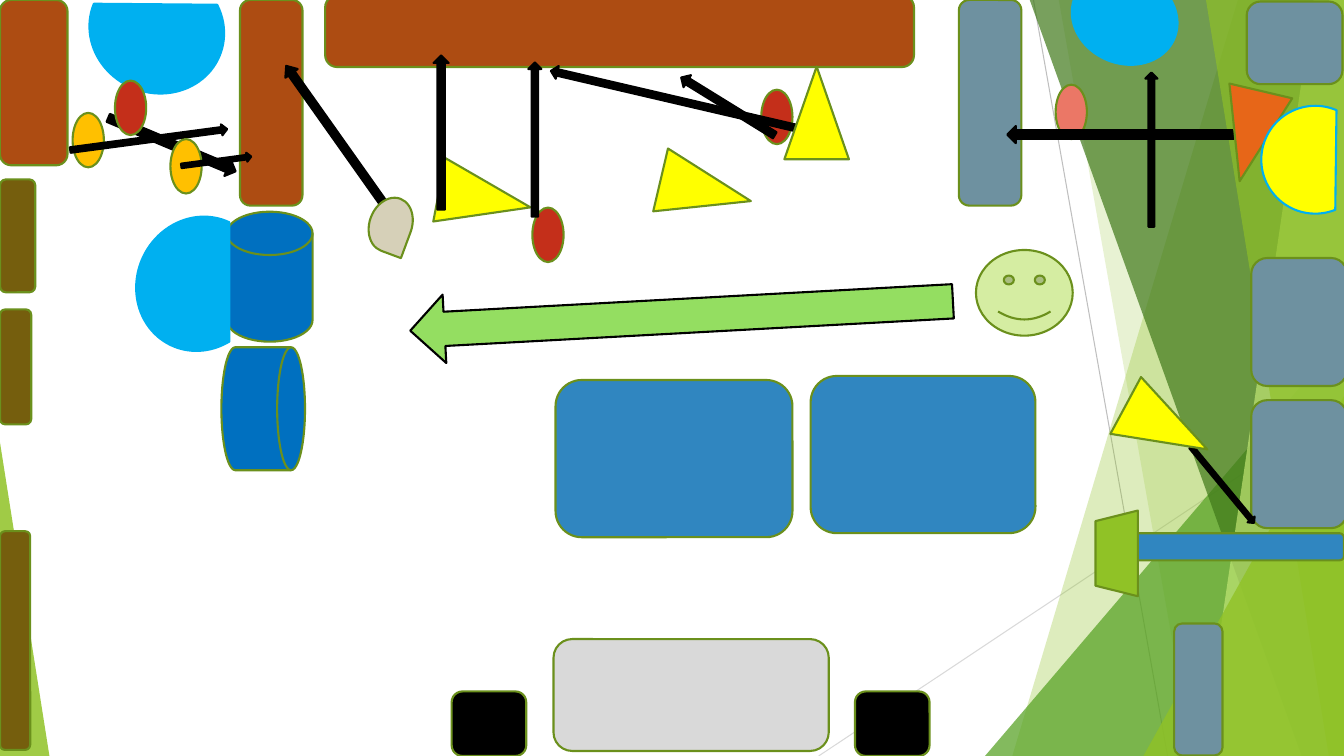
from dataclasses import dataclass

from lxml import etree
from pptx import Presentation
from pptx.dml.color import RGBColor
from pptx.enum.shapes import MSO_CONNECTOR, MSO_SHAPE
from pptx.oxml.ns import qn
from pptx.util import Inches, Pt

ROUND = MSO_SHAPE.ROUNDED_RECTANGLE
TRIANGLE = MSO_SHAPE.ISOSCELES_TRIANGLE
OVAL = MSO_SHAPE.OVAL
CHORD = MSO_SHAPE.CHORD
ARROW = MSO_SHAPE.UP_ARROW
DISK = MSO_SHAPE.FLOWCHART_MAGNETIC_DISK
SMILEY = MSO_SHAPE.SMILEY_FACE
TEAR = MSO_SHAPE.TEAR
TRAPEZOID = MSO_SHAPE.TRAPEZOID
STRAIGHT = MSO_CONNECTOR.STRAIGHT

WIDTH, HEIGHT, TOP = 13.33, 7.5, -0.01
GREEN, OLIVE, BLACK = "90C226", "6B901C", "000000"
OCHRE, RUST, SLATE = "755E0D", "AD4C12", "6E91A0"
SKY, BLUE, DEEP_BLUE = "00B0F0", "3086C0", "0070C0"
YELLOW, AMBER, RED = "FFFF00", "FFC000", "C42F1A"


@dataclass
class Ray:
    x1: float
    y1: float
    x2: float
    y2: float
    color: str


@dataclass
class Facet:
    """Translucent band from the top edge to the bottom, ending at the right side."""
    top_x: float
    bottom_x: float
    fill: str
    alpha: int


@dataclass
class Piece:
    kind: MSO_SHAPE
    x: float
    y: float
    w: float
    h: float
    fill: str
    rot: float = 0
    line: str | None = OLIVE
    adj: tuple[float, ...] = ()
    alpha: int = 100


def block(x: float, y: float, w: float, h: float, fill: str, rot: float = 0) -> Piece:
    return Piece(ROUND, x, y, w, h, fill, rot)


def person(x: float, y: float, fill: str) -> Piece:
    return Piece(OVAL, x, y, 0.31, 0.54, fill)


def cone(x: float, y: float, rot: float = 0, fill: str = YELLOW) -> Piece:
    return Piece(TRIANGLE, x, y, 0.64, 0.92, fill, rot)


def arrow(x: float, y: float, w: float, h: float, rot: float = 0,
          fill: str = BLACK, adj: tuple[float, ...] = ()) -> Piece:
    return Piece(ARROW, x, y, w, h, fill, rot, BLACK, adj)


def wedge(x: float, y: float, w: float, h: float, fill: str, alpha: int, tip: float) -> Piece:
    return Piece(TRIANGLE, x, y, w, h, fill, 0, None, (tip,), alpha)


BACKDROP = [
    Ray(10.25, 0, 11.58, HEIGHT, "BFBFBF"),
    Ray(WIDTH, 4.03, 8.12, HEIGHT, "D9D9D9"),
    Facet(12.28, 10.04, GREEN, 30),
    Facet(10.5, 11.83, GREEN, 20),
    wedge(9.77, 3.33, 3.56, 4.17, "54A021", 72, 1),
    Facet(10.21, 12.91, "3F7819", 70),
    Facet(13.03, 11.92, "C0E474", 70),
    Facet(11.96, 13.18, GREEN, 65),
    wedge(11.34, 3.93, 1.99, 3.57, GREEN, 80, 1),
    wedge(0, 4.39, 0.49, 3.11, GREEN, 85, 0),
]

ROOM = [
    block(0, 5.27, 0.3, 2.17, OCHRE),
    block(5.49, 6.34, 2.73, 1.11, "D9D9D9"),
    *(block(x, 6.86, 0.74, 0.64, BLACK) for x in (4.48, 8.48)),
    block(0, 0, 0.67, 1.64, RUST),
    block(1.67, 0.71, 2.04, 0.62, RUST, 90),
    block(5.79, -2.61, 0.71, 5.84, RUST, 90),
    block(8.8, 0.71, 2.04, 0.62, SLATE, 90),
    Piece(CHORD, 0.93, -0.38, 1.25, 1.35, SKY, 292.5, SKY),
    Piece(CHORD, 10.7, -0.36, 0.91, 1.07, SKY, 292.5, SKY),
    Piece(DISK, 2.25, 2.1, 0.85, 1.29, DEEP_BLUE),
    Piece(DISK, 2, 3.64, 1.22, 0.83, DEEP_BLUE, 90),
    block(8.04, 3.73, 2.23, 1.56, BLUE),
    block(11.24, 5.29, 2.09, 0.27, BLUE),
    block(12.43, -0.05, 0.82, 0.95, SLATE, 90),
    block(11.23, 6.6, 1.31, 0.48, SLATE, 90),
    *(block(12.25, y, 1.27, 0.95, SLATE, 90) for y in (2.72, 4.13)),
    cone(4.49, 1.51, 100.9),
    cone(6.68, 1.43, 103.2),
    person(10.47, 0.84, "EB7766"),
    person(7.55, 0.89, RED),
    person(0.72, 1.12, AMBER),
    arrow(1.62, 0.75, 0.17, 1.37, 112.8),
    arrow(11.21, 0.03, 0.17, 2.61, 270),
    arrow(11.36, 0.72, 0.12, 1.53),
    arrow(1.42, 0.6, 0.11, 1.57, 82.4),
    arrow(12.08, 4.32, 0.09, 0.98, 140.4),
    cone(12.08, 0.89, 193.2, "E76618"),
    Piece(SMILEY, 9.68, 2.48, 0.96, 0.85, "D5EDA2"),
    arrow(3.31, 0.48, 0.15, 1.89, 324.7, adj=(0.5, 0.61)),
    Piece(TEAR, 3.6, 2.02, 0.55, 0.42, "D6D0B8", 110.3),
    arrow(6.65, -0.29, 0.13, 2.57, 283.1),
    arrow(6.42, 0.44, 0.68, 5.39, 266.9, "94DE61"),
    arrow(7.15, 0.51, 0.14, 1.09, 301.7),
    block(0, 3.07, 0.31, 1.14, OCHRE),
    block(0, 1.78, 0.35, 1.12, OCHRE),
    Piece(CHORD, 1.36, 2.14, 1.25, 1.35, SKY, 25.3, SKY, (22.67, 162)),
    Piece(CHORD, 12.51, 1.05, 1.07, 1.07, YELLOW, 23.2, SKY),
    Piece(TRAPEZOID, 10.65, 5.28, 0.85, 0.42, GREEN, 270),
    cone(11.25, 3.78, 118.3),
    person(1.69, 1.38, AMBER),
    person(1.14, 0.8, RED),
    person(5.28, 2.06, RED),
    cone(7.78, 0.66),
    block(5.51, 3.77, 2.35, 1.56, BLUE),
    arrow(2.1, 1.25, 0.09, 0.7, 82.4),
    arrow(4.3, 0.55, 0.15, 1.53),
    arrow(5.24, 0.62, 0.13, 1.53),
]


def rgb(color: str) -> RGBColor:
    return RGBColor.from_string(color)


def paint(sp, fill: str, alpha: int, line: str | None) -> None:
    sp.shadow.inherit = False
    sp.fill.solid()
    sp.fill.fore_color.rgb = rgb(fill)
    if alpha < 100:
        clr = sp._element.spPr.find(qn("a:solidFill"))[0]
        etree.SubElement(clr, qn("a:alpha")).set("val", str(alpha * 1000))
    if line is None:
        sp.line.fill.background()
    else:
        sp.line.color.rgb = rgb(line)
        sp.line.width = Pt(1.5)


def draw_ray(s, ray: Ray) -> None:
    sp = s.shapes.add_connector(STRAIGHT, *map(Inches, (ray.x1, ray.y1, ray.x2, ray.y2)))
    sp.line.color.rgb = rgb(ray.color)
    sp.line.width = Pt(0.75)
    etree.SubElement(sp._element.spPr, qn("a:effectLst"))


def draw_facet(s, facet: Facet) -> None:
    fb = s.shapes.build_freeform(Inches(facet.top_x), Inches(TOP))
    corners = [(WIDTH, TOP), (WIDTH, HEIGHT), (facet.bottom_x, HEIGHT)]
    fb.add_line_segments([(Inches(x), Inches(y)) for x, y in corners], close=True)
    paint(fb.convert_to_shape(), facet.fill, facet.alpha, None)


def draw_piece(s, piece: Piece) -> None:
    sp = s.shapes.add_shape(piece.kind, *map(Inches, (piece.x, piece.y, piece.w, piece.h)))
    sp.rotation = piece.rot
    for i, value in enumerate(piece.adj):
        sp.adjustments[i] = value
    paint(sp, piece.fill, piece.alpha, piece.line)


def main() -> None:
    prs = Presentation()
    prs.slide_width, prs.slide_height = Inches(WIDTH), Inches(HEIGHT)
    s = prs.slides.add_slide(prs.slide_layouts[6])
    draw = {Ray: draw_ray, Facet: draw_facet, Piece: draw_piece}
    for item in BACKDROP + ROOM:
        draw[type(item)](s, item)
    prs.save("out.pptx")


if __name__ == "__main__":
    main()
